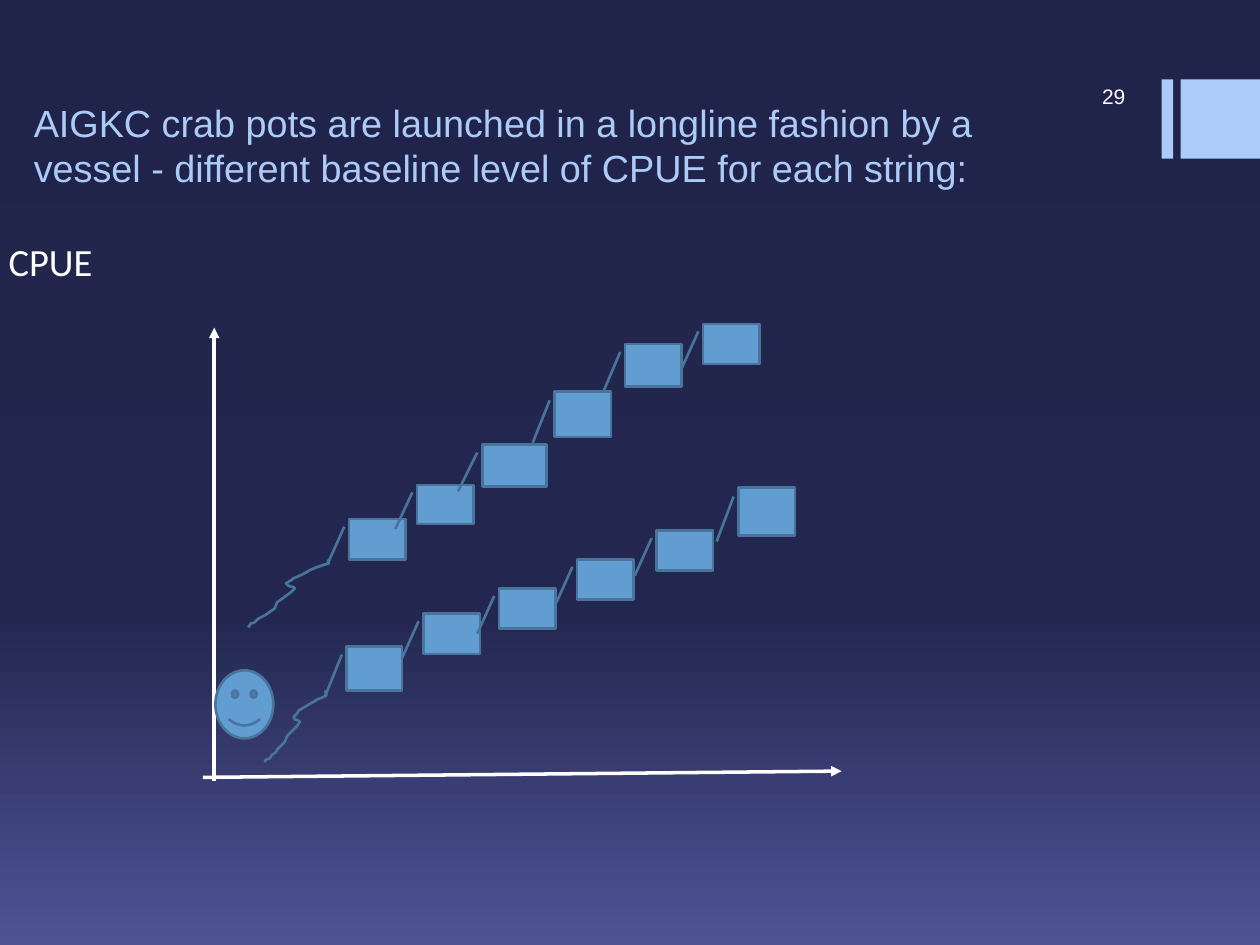
from copy import deepcopy
from pptx import Presentation
from pptx.dml.color import RGBColor as RGB
from pptx.enum.shapes import MSO_CONNECTOR as CONN, MSO_SHAPE as SHP
from pptx.enum.text import MSO_ANCHOR as ANC, PP_ALIGN as AL
from pptx.oxml.ns import qn
from pptx.oxml.xmlchemy import OxmlElement as Elem
from pptx.util import Inches, Pt

THEME = {
    "sky": [(0, "21244A"), (0.65, "232750"), (1, "4F5395")],
    "accent": "ACCBF9", "pot": "629DD1", "rope": "49749B", "white": "FFFFFF",
    "title_size": 21.6, "label_size": 22, "number_size": 12,
    "pot_line": 1.5, "axis_line": 2,
}

prs = Presentation()
prs.slide_width, prs.slide_height = Inches(10), Inches(7.5)
CELL = prs.slide_width // 1000
s = prs.slides.add_slide(prs.slide_layouts[6])


def grid(*cells):
    return [c * CELL for c in cells]


def paint(sp, fill=None, line=None):
    sp.shadow.inherit = False
    for part, color in ((sp.fill, fill), (sp.line.fill, line)):
        if color:
            part.solid()
            part.fore_color.rgb = RGB.from_string(THEME[color])
        else:
            part.background()
    if line:
        sp.line.width = Pt(THEME["pot_line"])


bg = s.background.fill
bg.gradient()
bg.gradient_angle = 270
stops = next(s.element.iter(qn("a:gsLst")))
stops.insert(1, deepcopy(stops[0]))
for stop, (pos, color) in zip(bg.gradient_stops, THEME["sky"]):
    stop.position = pos
    stop.color.rgb = RGB.from_string(color)

for left, width in ((922, 9), (937, 63)):
    paint(s.shapes.add_shape(SHP.RECTANGLE, *grid(left, 63, width, 63)), "accent")

title = ("AIGKC crab pots are launched in a longline fashion by a vessel - "
         "different baseline level of CPUE for each string:")
texts = [
    (title, (17, 30, 834, 126), "title_size", "Arial", "accent", ANC.BOTTOM, AL.LEFT),
    ("29", (800, 60, 103, 33), "number_size", "Arial", "white", ANC.MIDDLE, AL.RIGHT),
    ("CPUE", (-3, 187, 200, 40), "label_size", "Calibri", "white", ANC.MIDDLE, AL.LEFT),
]
for text, at, size, font, color, anchor, align in texts:
    tf = s.shapes.add_textbox(*grid(*at)).text_frame
    p = tf.paragraphs[0]
    r = p.add_run()
    formats = {
        tf: {"word_wrap": True, "vertical_anchor": anchor},
        p: {"alignment": align},
        r: {"text": text},
        r.font: {"name": font, "size": Pt(THEME[size])},
        r.font.color: {"rgb": RGB.from_string(THEME[color])},
    }
    for obj, fmt in formats.items():
        for name, value in fmt.items():
            setattr(obj, name, value)

for ends in ((170, 620, 170, 260), (161, 617, 668, 612)):
    axis = s.shapes.add_connector(CONN.STRAIGHT, *grid(*ends))
    axis.line.color.rgb = RGB.from_string(THEME["white"])
    axis.line.width = Pt(THEME["axis_line"])
    arrow = Elem("a:tailEnd")
    arrow.set("type", "triangle")
    next(axis.element.iter(qn("a:ln"))).append(arrow)
    axis.element.spPr.append(Elem("a:effectLst"))

strings = [
    [(277, 412, 45, 32), (331, 385, 45, 31), (383, 353, 51, 33),
     (440, 311, 45, 36), (496, 273, 45, 34), (558, 257, 45, 32)],
    [(275, 513, 44, 35), (336, 487, 45, 32), (396, 467, 45, 32),
     (458, 444, 45, 32), (521, 421, 45, 32), (586, 387, 45, 38)],
]
for pots in strings:
    for pot in pots:
        paint(s.shapes.add_shape(SHP.LINE_CALLOUT_1, *grid(*pot)), "pot", "rope")

ropes = [
    [(197, 498), (199, 495), (202, 494), (205, 491), (209, 489), (211, 488),
     (215, 485), (218, 483), (220, 478), (227, 473), (231, 470), (234, 467),
     (233, 466), (229, 465), (227, 463), (232, 460), (233, 459), (240, 456),
     (247, 452), (252, 450), (255, 449), (261, 447), (260, 444)],
    [(210, 605), (211, 603), (214, 602), (216, 599), (219, 597), (220, 595),
     (223, 592), (226, 589), (228, 584), (233, 579), (236, 576), (238, 573),
     (237, 572), (234, 571), (233, 569), (236, 566), (237, 564), (242, 561),
     (249, 557), (252, 555), (255, 554), (259, 552), (258, 548)],
]
for start, *bends in ropes:
    fb = s.shapes.build_freeform(*start, scale=CELL)
    fb.add_line_segments(bends, close=False)
    paint(fb.convert_to_shape(), line="rope")

paint(s.shapes.add_shape(SHP.SMILEY_FACE, *grid(171, 532, 46, 54)), "pot", "rope")

prs.save("out.pptx")
